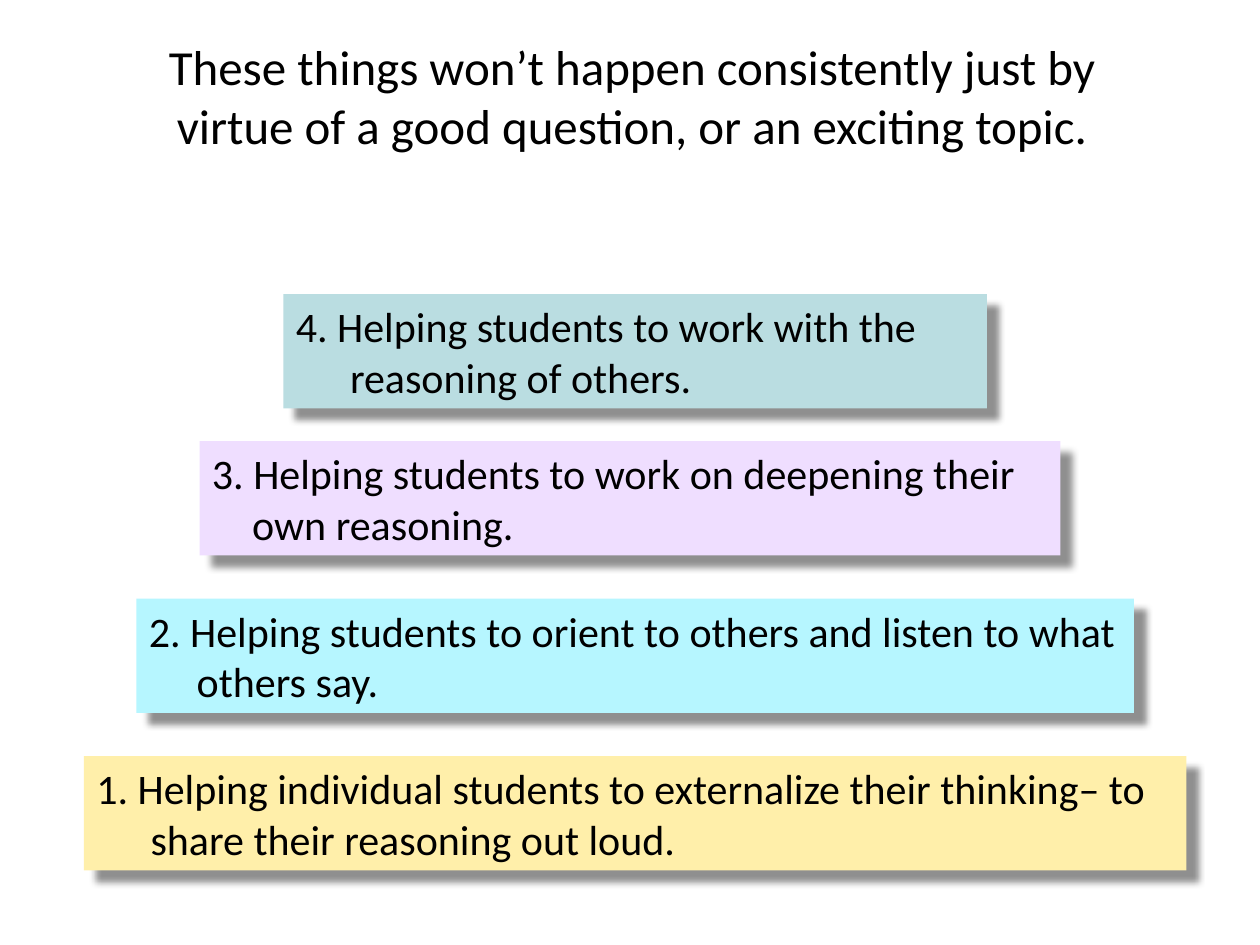
from dataclasses import dataclass

from lxml import etree
from pptx import Presentation
from pptx.dml.color import RGBColor
from pptx.enum.shapes import MSO_SHAPE
from pptx.enum.text import MSO_ANCHOR, MSO_AUTO_SIZE, PP_ALIGN
from pptx.oxml.ns import qn
from pptx.util import Inches, Pt

RECTANGLE = MSO_SHAPE.RECTANGLE
MIDDLE = MSO_ANCHOR.MIDDLE
FIXED_SIZE = MSO_AUTO_SIZE.NONE
LEFT, CENTER = PP_ALIGN.LEFT, PP_ALIGN.CENTER

SLIDE_WIDTH, SLIDE_HEIGHT = Inches(10), Inches(7.5)
CELL = SLIDE_WIDTH / 120  # the slide is a grid of 120 columns by 90 rows
STEP_ROWS = 10.9
TITLE_ONLY_LAYOUT = 5
FONT = "Calibri"
COLORS = {
    "text": "000000",
    "shadow": "000000",
    "yellow": "FFEFAA",
    "cyan": "B6F6FF",
    "lilac": "EFDEFF",
    "teal": "BADDE1",
}


@dataclass(frozen=True)
class Step:
    text: str
    color: str
    column: int
    row: int
    columns: int
    hanging: float  # inches


STEPS = [
    Step("1. Helping individual students to externalize their thinking– to "
         "share their reasoning out loud.", "yellow", 8, 72, 105, 0.43),
    Step("2. Helping students to orient to others and listen to "
         "what others say.", "cyan", 13, 57, 95, 0.38),
    Step("3. Helping students to work on deepening their own reasoning.",
         "lilac", 19, 42, 82, 0.32),
    Step("4. Helping students to work with the reasoning of others.",
         "teal", 27, 28, 67, 0.43),
]


def grid(cells: float) -> int:
    return round(cells * CELL)


def write(shape, text: str, *, size: float, align, hanging: float = 0) -> None:
    frame = shape.text_frame
    frame.word_wrap = True
    frame.auto_size = FIXED_SIZE
    frame.vertical_anchor = MIDDLE
    paragraph = frame.paragraphs[0]
    paragraph.alignment = align
    if hanging:
        properties = paragraph._p.get_or_add_pPr()
        properties.set("marL", str(Inches(hanging)))
        properties.set("indent", str(-Inches(hanging)))
    run = paragraph.add_run()
    run.text = text
    run.font.name = FONT
    run.font.size = Pt(size)
    run.font.color.rgb = RGBColor.from_string(COLORS["text"])


def cast_shadow(shape) -> None:
    """Add a soft shadow to the lower right."""
    shape.shadow.inherit = False
    effects = shape._element.spPr.find(qn("a:effectLst"))
    shadow = etree.SubElement(
        effects, qn("a:outerShdw"), blurRad=str(Pt(4)), dist=str(Pt(9)),
        dir=str(45 * 60000), algn="tl", rotWithShape="0")
    color = etree.SubElement(shadow, qn("a:srgbClr"), val=COLORS["shadow"])
    etree.SubElement(color, qn("a:alpha"), val="43000")


def draw_step(slide, step: Step) -> None:
    box = slide.shapes.add_shape(
        RECTANGLE, grid(step.column), grid(step.row),
        grid(step.columns), grid(STEP_ROWS))
    box.fill.solid()
    box.fill.fore_color.rgb = RGBColor.from_string(COLORS[step.color])
    box.line.fill.background()
    cast_shadow(box)
    write(box, step.text, size=24, align=LEFT, hanging=step.hanging)


def main() -> None:
    deck = Presentation()
    deck.slide_width, deck.slide_height = SLIDE_WIDTH, SLIDE_HEIGHT
    slide = deck.slides.add_slide(deck.slide_layouts[TITLE_ONLY_LAYOUT])

    title = slide.shapes.title
    title.left, title.top = Inches(0.9), Inches(0.24)
    title.width, title.height = Inches(8.23), Inches(1.04)
    write(title, "These things won’t happen consistently just by virtue of "
                 "a good question, or an exciting topic.", size=28, align=CENTER)

    for step in STEPS:
        draw_step(slide, step)
    deck.save("out.pptx")


if __name__ == "__main__":
    main()
